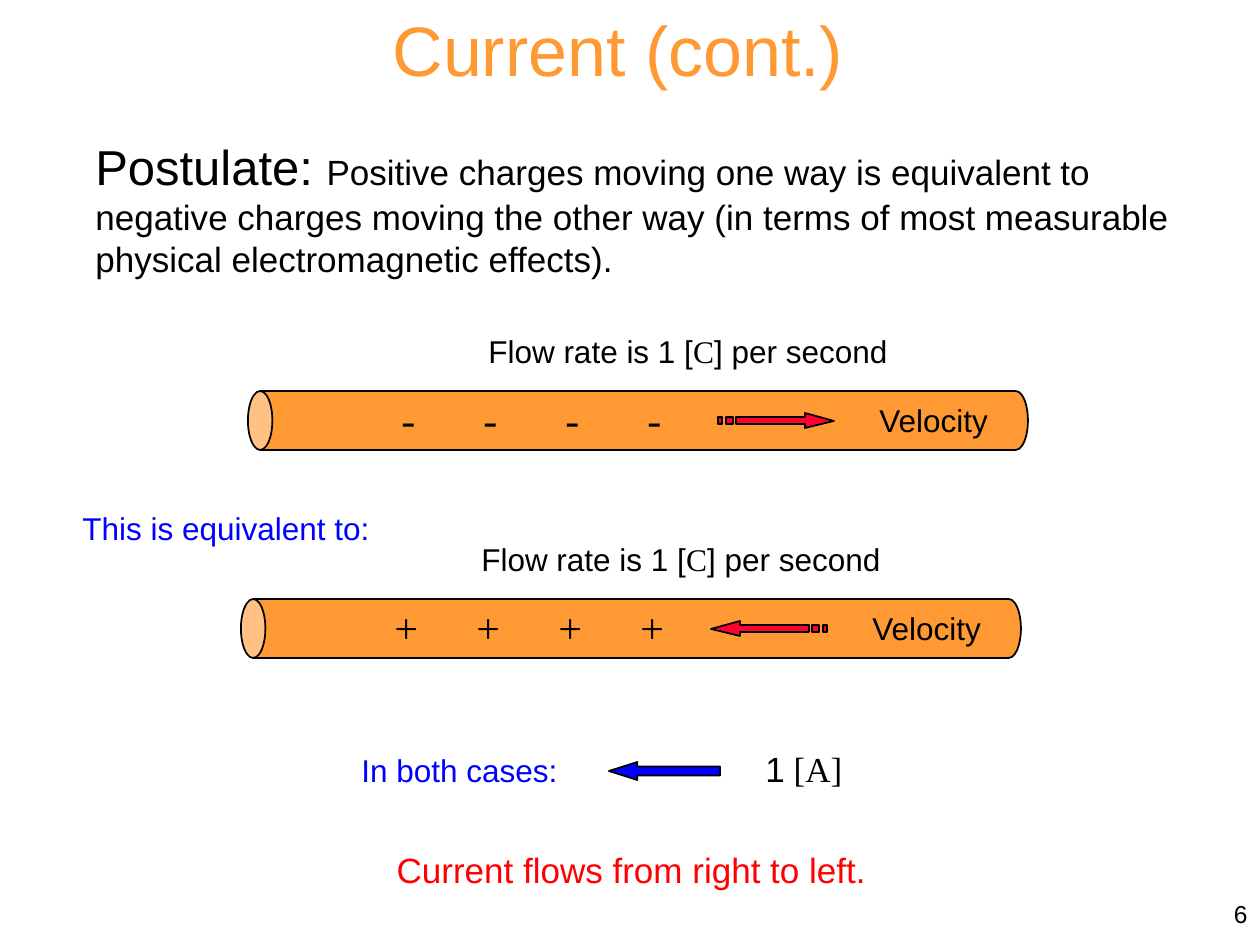
from pptx import Presentation
from pptx.dml.color import RGBColor
from pptx.enum.shapes import MSO_SHAPE as Shape
from pptx.enum.text import MSO_ANCHOR as Anchor, MSO_AUTO_SIZE as Auto, PP_ALIGN as Align
from pptx.util import Inches, Pt

SCALE = Inches(1) / 126
SANS, SERIF = "Arial", "Times New Roman"
BLACK, BLUE, RED = "000000", "0000FF", "FF0000"
ORANGE, CRIMSON = "FF9933", "FF0033"


def px(num):
    return round(num * SCALE)


def color(code):
    return RGBColor.from_string(code)


def paint(shape, fill):
    shape.shadow.inherit = False
    shape.fill.solid()
    shape.fill.fore_color.rgb = color(fill)
    shape.line.color.rgb = color(BLACK)
    shape.line.width = Pt(1)


def write(slide, box, runs, size, ink=BLACK, align=Align.LEFT, wrap=True):
    """Add a text box; each run is (text, face) or (text, face, size)."""
    frame = slide.shapes.add_textbox(*map(px, box)).text_frame
    frame.word_wrap = wrap
    frame.auto_size = Auto.SHAPE_TO_FIT_TEXT
    para = frame.paragraphs[0]
    para.alignment = align
    para.font.size = Pt(size)
    para.font.color.rgb = color(ink)
    para.font.name = runs[0][1]
    for text, face, *own in runs:
        run = para.add_run()
        run.text = text
        if face != runs[0][1]:
            run.font.name = face
        if own:
            run.font.size = Pt(own[0])
    return frame


def arrow(slide, x, y, left):
    """Red arrow with two stripes at its tail."""
    wide, top, low = 116, 4, 11
    head = [(87, 0), (87, top), (18, top), (18, low), (87, low), (87, 15), (wide, 8)]
    bars = [[(a, top), (a, low), (b, low), (b, top)] for a, b in ((8, 15), (0, 4))]
    parts = [[(wide - a if left else a, b) for a, b in part] for part in [head] + bars]
    pen = slide.shapes.build_freeform(*parts[0][0], scale=SCALE)
    for num, part in enumerate(parts):
        if num:
            pen.move_to(*part[0])
        pen.add_line_segments(part[1:], close=True)
    paint(pen.convert_to_shape(px(x), px(y)), CRIMSON)


def pipe(slide, box, sign, wide, left):
    """Wire with its flow label, four charges and velocity arrow."""
    x, y, w, h = box
    # The can stands upright, so its box is turned about the centre
    can = slide.shapes.add_shape(
        Shape.CAN, px(x + (w - h) / 2), px(y + (h - w) / 2), px(h), px(w))
    can.rotation = 270
    can.adjustments[0] = 0.415
    paint(can, ORANGE)
    for num in range(4):
        write(slide, (x + 141 + 82 * num, y - 4, wide, 63), [(sign, SERIF)], 24, wrap=False)
    arrow(slide, x + 470, y + 22, left)
    flow = [("Flow rate is 1 [", SANS), ("C", SERIF), ("] per second", SANS)]
    write(slide, (x + 228, y - 65, 430, 50), flow, 18, wrap=False)
    write(slide, (x + 619, y + 4, 135, 50), [("Velocity", SANS)], 18, wrap=False)


def intro(slide, box):
    """Title and postulate."""
    x, y, w, h = box
    write(slide, (x + 296, y, 478, 97), [("Current (cont.)", SANS)], 40, ORANGE, Align.CENTER)
    write(slide, (x, y + 130, w, h - 130), [
        ("Postulate: ", SANS, 28),
        ("Positive charges moving one way is equivalent to negative charges moving "
         "the other way (in terms of most measurable physical electromagnetic effects).", SANS),
    ], 20)


def result(slide, box):
    """Resulting current and conclusion."""
    x, y, w, h = box
    write(slide, (x, y + 4, 251, 50), [("In both cases:", SANS)], 18, BLUE)
    flow = slide.shapes.add_shape(Shape.LEFT_ARROW, px(x + 260), px(y + 21), px(111), px(18))
    flow.adjustments[0] = 0.5
    flow.adjustments[1] = 1.575
    paint(flow, BLUE)
    write(slide, (x + 404, y, 103, 55), [("1", SANS), (" [A]", SERIF)], 20, wrap=False)
    write(slide, (x + 11, y + h - 55, w - 11, 55),
          [("Current flows from right to left.", SANS)], 20, RED, Align.CENTER)


def main():
    deck = Presentation()
    deck.slide_width, deck.slide_height = px(1260), px(945)
    slide = deck.slides.add_slide(deck.slide_layouts[6])

    intro(slide, (83, 0, 1124, 287))

    # Two equivalent flows
    pipe(slide, (248, 391, 780, 59), "-", 39, False)
    write(slide, (70, 503, 333, 50), [("This is equivalent to:", SANS)], 18, BLUE)
    pipe(slide, (241, 599, 780, 59), "+", 49, True)

    result(slide, (349, 741, 554, 156))

    # Page number
    page = write(slide, (998, 882, 262, 63), [("6", SANS)], 14, align=Align.RIGHT)
    page.auto_size = Auto.NONE
    page.vertical_anchor = Anchor.MIDDLE

    deck.save("out.pptx")


if __name__ == "__main__":
    main()
